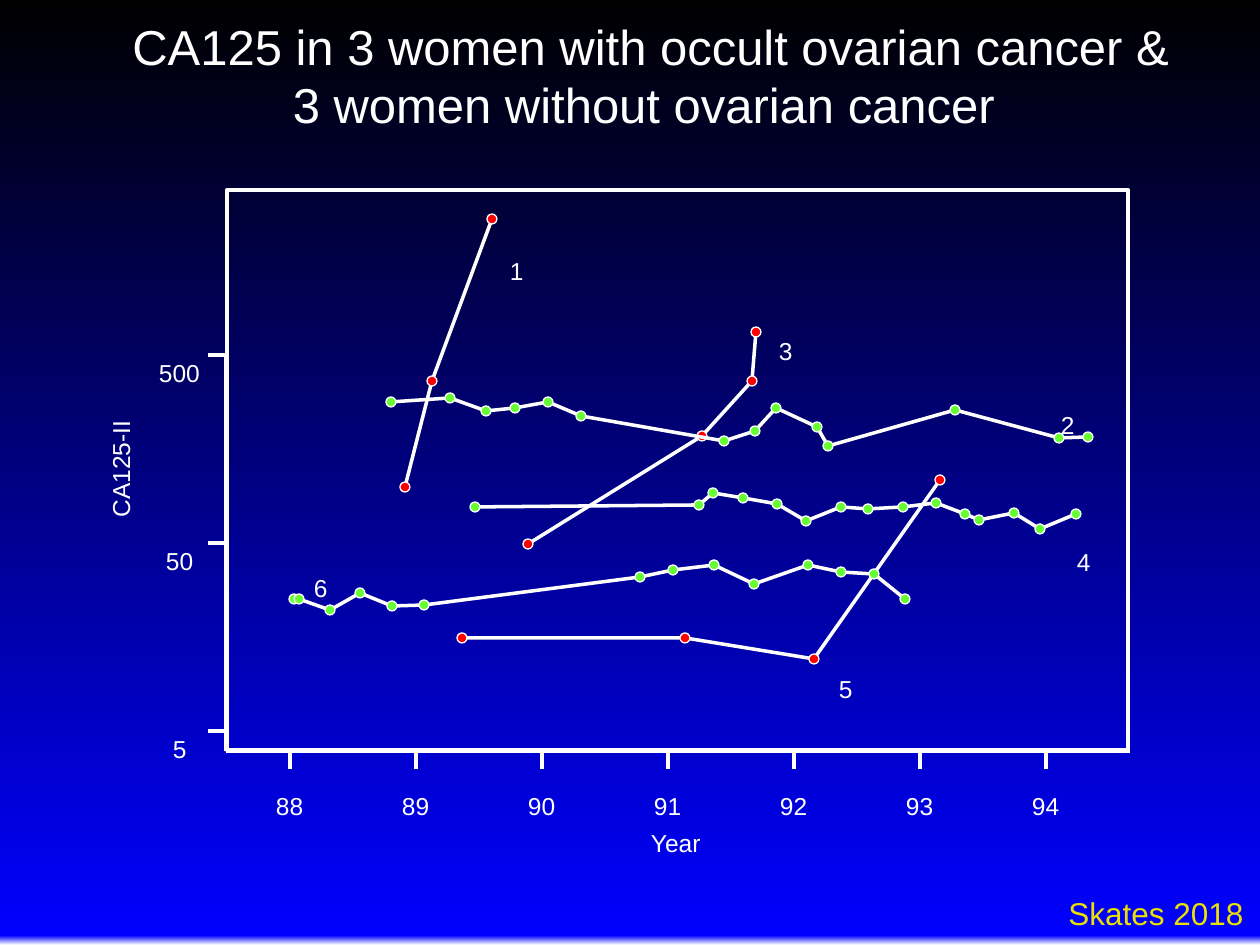
import copy

import pptx
import pptx.dml.color
import pptx.enum.shapes
import pptx.enum.text
import pptx.oxml
import pptx.oxml.ns
import pptx.util

# Content: positions in px, 126 to the inch
TITLE = "CA125 in 3 women with occult ovarian cancer & 3 women without ovarian cancer "
CREDIT = "Skates 2018"
X_TITLE, Y_TITLE = "Year", "CA125-II"
YEARS = ["88", "89", "90", "91", "92", "93", "94"]
LEVELS = ["5", "50", "500"]

# Each woman: number, group, label corner, measurements
WOMEN = [
    ("3", "cancer", (779, 336), [(528, 544), (702, 436), (752, 381), (756, 332)]),
    ("5", "cancer", (839, 674), [(462, 638), (685, 638), (814, 659), (940, 480)]),
    ("1", "cancer", (510, 256), [(405, 487), (432, 381), (492, 219)]),
    ("6", "healthy", (314, 573), [
        (294, 599), (299, 599), (330, 610), (360, 593), (392, 606), (424, 605),
        (640, 577), (673, 570), (714, 565), (754, 584), (808, 565), (841, 572),
        (874, 574), (905, 599)]),
    ("4", "healthy", (1077, 547), [
        (475, 507), (699, 505), (713, 493), (743, 498), (777, 504), (806, 521),
        (841, 507), (868, 509), (903, 507), (936, 503), (965, 514), (979, 520),
        (1014, 513), (1040, 529), (1076, 514)]),
    ("2", "healthy", (1061, 410), [
        (391, 402), (450, 398), (486, 411), (515, 408), (548, 402), (581, 416),
        (724, 441), (755, 431), (776, 408), (817, 427), (828, 446), (955, 410),
        (1059, 438), (1088, 437)]),
]

THEME = {
    "font": "Arial", "text": "FFFFFF", "credit": "EBE000",
    "cancer": "FF0000", "healthy": "66FF33",
    "background": [(0, "FFFFFF"), (0.01, "0000FF"), (1, "000000")],
    "title_size": 28, "credit_size": 18, "label_size": 14,
    "axis_width": 2.63, "curve_width": 2,
}

# Plot geometry
PX = 914400 / 126
FRAME = (227, 190, 901, 560)
AXIS_X, AXIS_Y, AXIS_END = 226, 751, 1130
TICK = 18
FIRST_YEAR, YEAR_STEP = 290, 126
FIRST_LEVEL, LEVEL_STEP = 731, 188
DIGIT, LABEL_HEIGHT = 14, 30
DOT = 10


def emu(*lengths):
    return [pptx.util.Emu(round(length * PX)) for length in lengths]


def rgb(name):
    return pptx.dml.color.RGBColor.from_string(THEME.get(name, name))


def set_line(shape, width):
    shape.line.color.rgb = rgb("text")
    shape.line.width = pptx.util.Pt(width)


def write(shape, text, size, color="text"):
    frame = shape.text_frame
    frame.text = text
    font = frame.paragraphs[0].runs[0].font
    font.name = THEME["font"]
    font.size = pptx.util.Pt(THEME[size])
    font.color.rgb = rgb(color)
    return frame


def remove_insets(frame):
    frame.margin_left = frame.margin_right = 0
    frame.margin_top = frame.margin_bottom = 0


def add_label(slide, text, left, top, width):
    label = slide.shapes.add_textbox(*emu(left, top, width, LABEL_HEIGHT))
    frame = write(label, text, "label_size")
    remove_insets(frame)
    frame.word_wrap = False
    frame.auto_size = pptx.enum.text.MSO_AUTO_SIZE.SHAPE_TO_FIT_TEXT
    return label


def add_axis_line(slide, *ends):
    line = slide.shapes.add_connector(
        pptx.enum.shapes.MSO_CONNECTOR.STRAIGHT, *emu(*ends))
    set_line(line, THEME["axis_width"])
    properties = line._element.spPr
    properties.append(pptx.oxml.parse_xml(
        "<a:effectLst %s/>" % pptx.oxml.ns.nsdecls("a")))


def paint_background(slide):
    fill = slide.background.fill
    fill.gradient()
    fill.gradient_angle = 90
    stop_list = slide._element.find(".//" + pptx.oxml.ns.qn("a:gsLst"))
    stop_list.append(copy.deepcopy(stop_list[0]))
    for stop, (position, color) in zip(fill.gradient_stops, THEME["background"]):
        stop.position = position
        stop.color.rgb = rgb(color)


def add_title(slide):
    title = slide.shapes.title
    title.left, title.top, title.width, title.height = emu(115, 16, 1071, 118)
    frame = write(title, TITLE, "title_size")
    remove_insets(frame)
    frame.word_wrap = True
    frame.auto_size = pptx.enum.text.MSO_AUTO_SIZE.SHAPE_TO_FIT_TEXT
    frame.vertical_anchor = pptx.enum.text.MSO_ANCHOR.TOP
    frame.paragraphs[0].alignment = pptx.enum.text.PP_ALIGN.CENTER


def add_axes(slide):
    # Year axis
    add_label(slide, X_TITLE, 651, 828, 52)
    for index, year in enumerate(YEARS):
        x = FIRST_YEAR + index * YEAR_STEP
        add_axis_line(slide, x, AXIS_Y, x, AXIS_Y + TICK)
        add_label(slide, year, x - DIGIT, 791, 2 * DIGIT)
    add_axis_line(slide, AXIS_X, AXIS_Y, AXIS_END, AXIS_Y)

    # Logarithmic CA125 axis
    add_label(slide, Y_TITLE, 72, 454, 97).rotation = 270
    for index, level in enumerate(LEVELS):
        y = FIRST_LEVEL - index * LEVEL_STEP
        width = DIGIT * len(level)
        add_axis_line(slide, AXIS_X, y, AXIS_X - TICK, y)
        add_label(slide, level, 180 - width / 2, y + 3, width)
    add_axis_line(slide, AXIS_X, AXIS_Y, AXIS_X, y)

    # Plot frame
    frame = slide.shapes.add_shape(
        pptx.enum.shapes.MSO_SHAPE.RECTANGLE, *emu(*FRAME))
    frame.shadow.inherit = False
    frame.fill.background()
    set_line(frame, THEME["axis_width"])


def add_woman(slide, group, points):
    builder = slide.shapes.build_freeform(*points[0], scale=PX)
    builder.add_line_segments(points[1:], close=False)
    curve = builder.convert_to_shape()
    curve.shadow.inherit = False
    curve.fill.background()
    set_line(curve, THEME["curve_width"])
    for x, y in points:
        dot = slide.shapes.add_shape(
            pptx.enum.shapes.MSO_SHAPE.OVAL,
            *emu(x - DOT / 2, y - DOT / 2, DOT, DOT))
        dot.shadow.inherit = False
        dot.fill.solid()
        dot.fill.fore_color.rgb = rgb(group)
        set_line(dot, 0)


def main():
    deck = pptx.Presentation()
    deck.slide_width, deck.slide_height = emu(1260, 945)
    slide = deck.slides.add_slide(deck.slide_layouts[5])
    paint_background(slide)
    add_title(slide)

    credit = slide.shapes.add_textbox(*emu(1056, 888, 203, 50))
    write(credit, CREDIT, "credit_size", "credit").word_wrap = True

    add_axes(slide)
    for number, group, corner, points in WOMEN:
        add_woman(slide, group, points)
    for number, group, corner, points in WOMEN:
        add_label(slide, number, *corner, DIGIT)
    deck.save("out.pptx")


if __name__ == "__main__":
    main()
